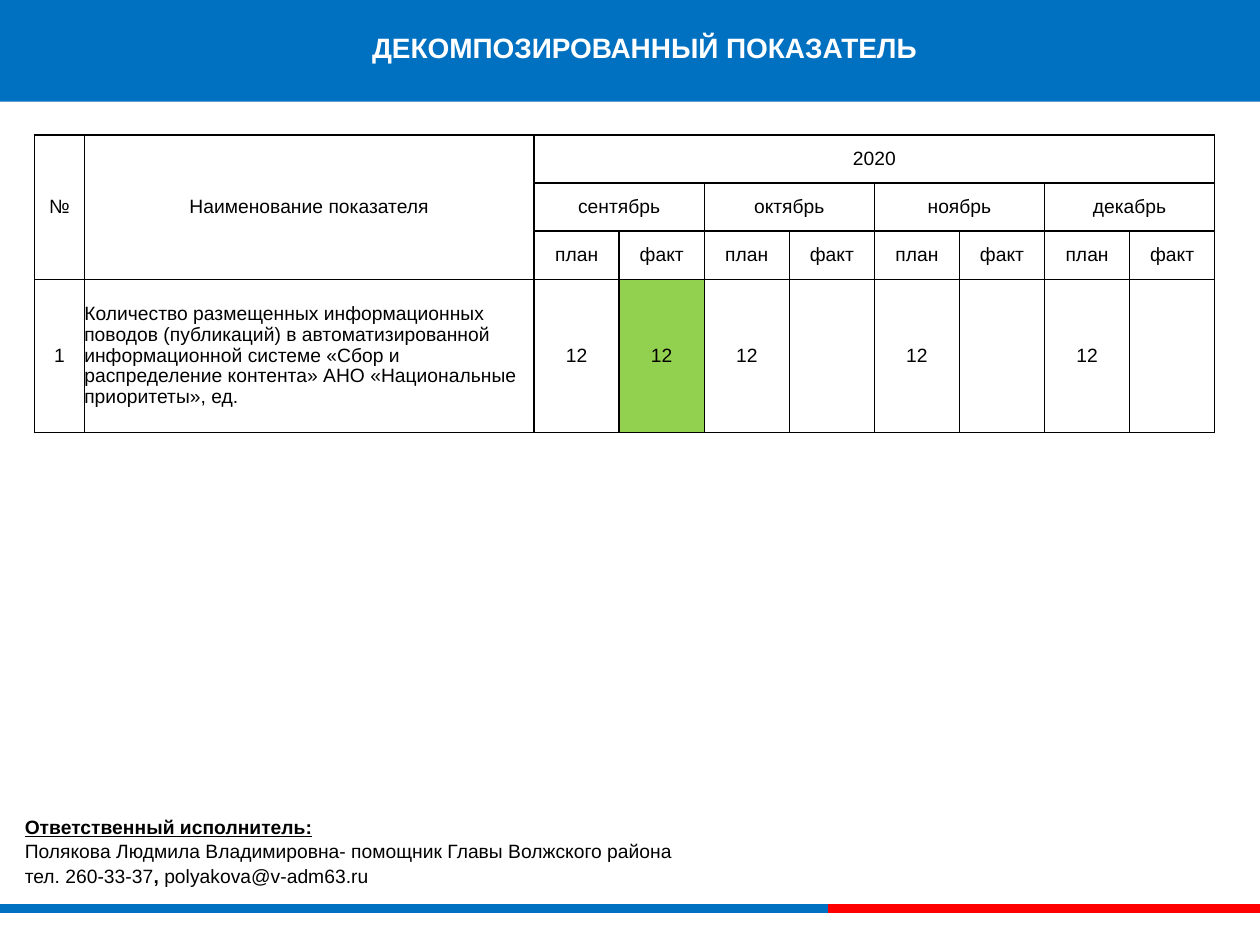
from lxml.etree import SubElement
from pptx import Presentation
from pptx.dml.color import RGBColor
from pptx.enum.shapes import MSO_CONNECTOR as Conn, MSO_SHAPE as Shape
from pptx.enum.text import MSO_ANCHOR as Anchor, PP_ALIGN as Align
from pptx.oxml.ns import qn
from pptx.util import Cm, Pt

COLORS = {"blue": "0070C1", "red": "FF0000", "green": "92D050", "black": "000000", "white": "FFFFFF"}
FONT = "Arial"
TITLE = "ДЕКОМПОЗИРОВАННЫЙ ПОКАЗАТЕЛЬ"
YEAR = "2020"
MONTHS = ["сентябрь", "октябрь", "ноябрь", "декабрь"]
HEADERS = ["№", "Наименование показателя"]
INDICATOR = ("Количество размещенных информационных поводов (публикаций) в автоматизированной "
             "информационной системе «Сбор и распределение контента» АНО «Национальные приоритеты», ед.")
VALUES = ["12", "12", "12", "", "12", "", "12", ""]
ROWS = [
    HEADERS + [YEAR] + [""] * 7,
    ["", ""] + [text for month in MONTHS for text in (month, "")],
    ["", ""] + ["план", "факт"] * len(MONTHS),
    ["1", INDICATOR] + VALUES,
]
MERGES = [(0, 0, 2, 0), (0, 1, 2, 1), (0, 2, 0, 9)] + [(1, c, 1, c + 1) for c in range(2, 10, 2)]
COL_WIDTHS = [1.0, 3.57 * 2.54] + [1.715] * 8
ROW_HEIGHTS = [0.97] * 3 + [3.09]
FACT_DONE = (3, 3)
CONTACT = [
    [("Ответственный исполнитель:", True, True)],
    [("Полякова Людмила Владимировна- помощник Главы Волжского района", False, False)],
    [("тел. 260-33-37", False, False), (", ", True, False), ("polyakova@v-adm63.ru", False, False)],
]
STRIPES = [("blue", 0, 16.69), ("red", 16.69, 25.4)]


def rgb(name):
    """Return the named colour."""
    return RGBColor.from_string(COLORS[name])


def add_run(p, text, size=11, color="black", bold=False, underline=False):
    """Add one formatted run to a paragraph."""
    r = p.add_run()
    r.text = text
    r.font.name, r.font.size = FONT, Pt(size)
    r.font.bold, r.font.underline = bold, underline
    r.font.color.rgb = rgb(color)


def set_margins(box, size):
    """Set four equal inner margins."""
    box.margin_left = box.margin_right = box.margin_top = box.margin_bottom = Cm(size)


def add_borders(cell):
    """Draw a thin black line on each side of a cell."""
    tc_pr = cell._tc.get_or_add_tcPr()
    for side in ("a:lnL", "a:lnR", "a:lnT", "a:lnB"):
        ln = SubElement(tc_pr, qn(side), w=str(Pt(1)))
        fill = SubElement(ln, qn("a:solidFill"))
        SubElement(fill, qn("a:srgbClr"), val=COLORS["black"])


def add_header(s):
    """Place the title over its blue band."""
    title = s.shapes.title
    band = s.shapes.add_shape(Shape.RECTANGLE, 0, Cm(-0.08), Cm(25.4), Cm(2.13))
    band.shadow.inherit = False
    band.fill.solid()
    band.fill.fore_color.rgb = rgb("blue")
    band.line.fill.background()
    title.element.addprevious(band.element)
    title.left, title.top, title.width, title.height = Cm(2.49), Cm(-0.08), Cm(21.01), Cm(2.06)
    tf = title.text_frame
    tf.vertical_anchor = Anchor.MIDDLE
    set_margins(tf, 0.13)
    p = tf.paragraphs[0]
    p.alignment = Align.CENTER
    add_run(p, TITLE, 16, "white", True)


def add_plan_table(s):
    """Build the monthly plan and fact table."""
    frame = s.shapes.add_table(len(ROWS), len(COL_WIDTHS), Cm(0.7), Cm(2.72),
                               Cm(sum(COL_WIDTHS)), Cm(sum(ROW_HEIGHTS)))
    table = frame.table
    for col, width in zip(table.columns, COL_WIDTHS):
        col.width = Cm(width)
    for row, height in zip(table.rows, ROW_HEIGHTS):
        row.height = Cm(height)
    for i, row in enumerate(ROWS):
        for j, text in enumerate(row):
            cell = table.cell(i, j)
            set_margins(cell, 0)
            cell.vertical_anchor = Anchor.MIDDLE
            add_borders(cell)
            cell.fill.background()
            if (i, j) == FACT_DONE:
                cell.fill.solid()
                cell.fill.fore_color.rgb = rgb("green")
            p = cell.text_frame.paragraphs[0]
            p.alignment = Align.LEFT if text == INDICATOR else Align.CENTER
            if text == INDICATOR:
                p.line_spacing = 0.97
            if text:
                add_run(p, text)
    for top, left, bottom, right in MERGES:
        table.cell(top, left).merge(table.cell(bottom, right))


def add_contact(s):
    """Write the responsible person's details."""
    tf = s.shapes.add_textbox(Cm(0.5), Cm(16.18), Cm(24.2), Cm(1.65)).text_frame
    tf.word_wrap = True
    set_margins(tf, 0)
    tf.margin_top = Cm(0.25)
    for i, runs in enumerate(CONTACT):
        p = tf.add_paragraph() if i else tf.paragraphs[0]
        p.space_before = Pt(0.8 if i else 0)
        for text, bold, underline in runs:
            add_run(p, text, bold=bold, underline=underline)


def add_stripes(s):
    """Draw the two-coloured line at the foot."""
    for color, start, end in STRIPES:
        line = s.shapes.add_connector(Conn.STRAIGHT, Cm(start), Cm(18.31), Cm(end), Cm(18.31))
        line.line.color.rgb = rgb(color)
        line.line.width = Pt(5)
        SubElement(line.element.spPr, qn("a:effectLst"))


def main():
    """Build and save the slide."""
    prs = Presentation()
    prs.slide_width, prs.slide_height = Cm(25.4), Cm(19.05)
    s = prs.slides.add_slide(prs.slide_layouts[5])
    add_stripes(s)
    add_header(s)
    add_plan_table(s)
    add_contact(s)
    prs.save("out.pptx")


if __name__ == "__main__":
    main()
